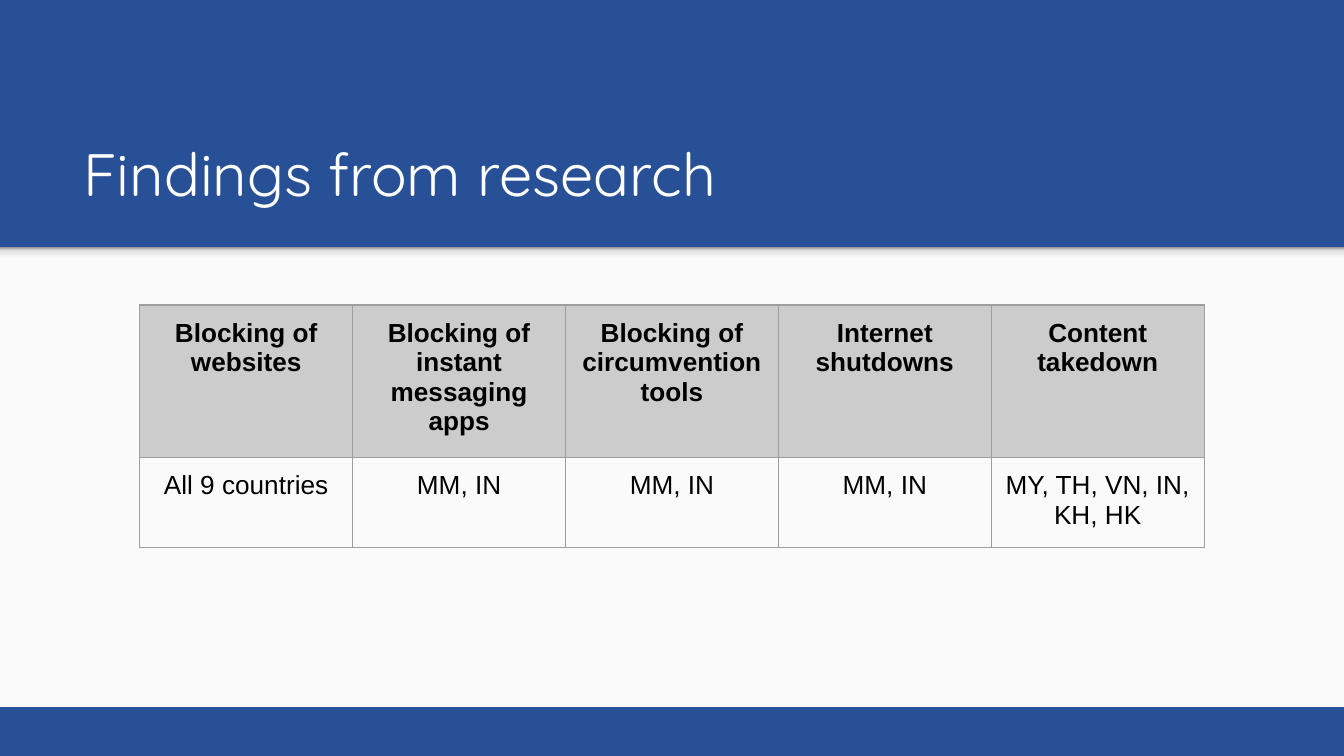
from lxml import etree
from pptx import Presentation
from pptx.dml.color import RGBColor
from pptx.enum.shapes import MSO_SHAPE as Shape
from pptx.enum.text import MSO_ANCHOR as Anchor, PP_ALIGN as Align
from pptx.oxml.ns import qn
from pptx.util import Inches, Pt

BLUE, PAPER, WHITE, BLACK = "285096", "FAFAFA", "FFFFFF", "000000"
HEAD, RULE = "CCCCCC", "9E9E9E"
SHADE = [(0, "F9F9F9"), (36, "F9F9F9"), (80, "DEDEDE"), (100, "999999")]

COLS = [
    ("Blocking of websites", "All 9 countries"),
    ("Blocking of instant messaging apps", "MM, IN"),
    ("Blocking of circumvention tools", "MM, IN"),
    ("Internet shutdowns", "MM, IN"),
    ("Content takedown", "MY, TH, VN, IN, KH, HK"),
]


def color(code):
    return RGBColor.from_string(code)


def node(parent, tag, **attrs):
    return etree.SubElement(parent, qn(tag), attrs)


def write(frame, text, font="Arial", size=14, ink=BLACK, bold=False,
          align=Align.LEFT):
    para = frame.paragraphs[0]
    para.alignment = align
    run = para.add_run()
    run.text = text
    run.font.name = font
    run.font.size = Pt(size)
    run.font.bold = bold
    run.font.color.rgb = color(ink)


class Deck:
    def __init__(self, slide):
        self.slide = slide
        self.pad = Inches(0.1)

    def back(self, code):
        fill = self.slide.background.fill
        fill.solid()
        fill.fore_color.rgb = color(code)

    def inset(self, item):
        item.margin_left = item.margin_right = self.pad
        item.margin_top = item.margin_bottom = self.pad

    def rect(self, x, y, w, h, code):
        box = self.slide.shapes.add_shape(
            Shape.RECTANGLE, Inches(x), Inches(y), Inches(w), Inches(h))
        box.shadow.inherit = False
        box.fill.solid()
        box.fill.fore_color.rgb = color(code)
        box.line.fill.background()
        return box

    def fade(self, x, y, w, h, stops):
        box = self.rect(x, y, w, h, stops[0][1])
        solid = box.element.spPr.find(qn("a:solidFill"))
        grad = etree.Element(qn("a:gradFill"), rotWithShape="1")
        marks = node(grad, "a:gsLst")
        for spot, code in stops:
            mark = node(marks, "a:gs", pos=str(spot * 1000))
            node(mark, "a:srgbClr", val=code)
        node(grad, "a:lin", ang=str(270 * 60000), scaled="0")
        solid.getparent().replace(solid, grad)

    def title(self, x, y, w, h, text):
        box = self.slide.shapes.add_textbox(
            Inches(x), Inches(y), Inches(w), Inches(h))
        frame = box.text_frame
        frame.word_wrap = True
        frame.vertical_anchor = Anchor.BOTTOM
        self.inset(frame)
        write(frame, text, font="Quicksand", size=32, ink=WHITE)

    def border(self, cell):
        props = cell._tc.get_or_add_tcPr()
        for i, side in enumerate("LRTB"):
            line = etree.Element(qn(f"a:ln{side}"), w=str(Pt(0.75)))
            node(node(line, "a:solidFill"), "a:srgbClr", val=RULE)
            props.insert(i, line)

    def cell(self, cell, text, head):
        self.inset(cell)
        if head:
            cell.fill.solid()
            cell.fill.fore_color.rgb = color(HEAD)
        else:
            cell.fill.background()
        self.border(cell)
        write(cell.text_frame, text, bold=head, align=Align.CENTER)

    def table(self, x, y, side, wide, high, cols):
        rows = list(zip(*cols))
        grid = self.slide.shapes.add_table(
            len(rows), len(cols), Inches(x), Inches(y),
            Inches(side), Inches(side)).table
        grid.first_row = grid.horz_banding = False
        for col in grid.columns:
            col.width = Inches(wide / len(cols))
        for r, row in enumerate(rows):
            grid.rows[r].height = Inches(high)
            for c, text in enumerate(row):
                self.cell(grid.cell(r, c), text, head=r == 0)


def main():
    prs = Presentation()
    prs.slide_width = Inches(10)
    prs.slide_height = Inches(10 * 9 / 16)
    deck = Deck(prs.slides.add_slide(prs.slide_layouts[6]))

    # Blue page with a light panel and its soft top edge
    deck.back(BLUE)
    deck.rect(0, 1.84, 10, 3.42, PAPER)
    deck.fade(0, 1.84, 10, 0.12, SHADE)

    # Title
    deck.title(0.52, 0.81, 8.99, 0.84, "Findings from research")

    # Findings by kind of control
    deck.table(1.04, 2.27, 3.28, 7.92, 0.42, COLS)

    prs.save("out.pptx")


if __name__ == "__main__":
    main()
